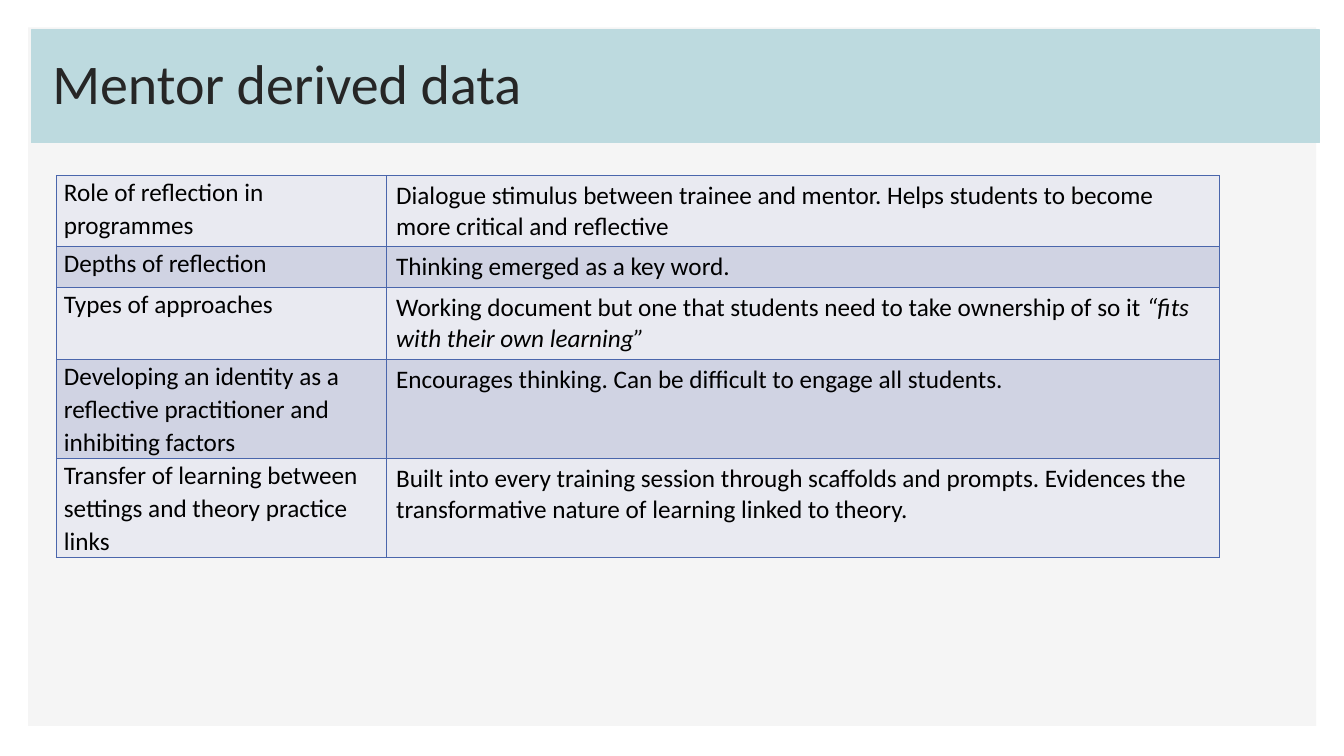
from lxml import etree
from pptx import Presentation
from pptx.dml.color import RGBColor
from pptx.enum.shapes import MSO_SHAPE
from pptx.enum.text import MSO_ANCHOR
from pptx.oxml.ns import qn
from pptx.util import Cm, Pt

ROWS = [
    (1.78, "Role of reflection in programmes",
     ["Dialogue stimulus between trainee and mentor. Helps students to become "
      "more critical and reflective"]),
    (1.04, "Depths of reflection", ["Thinking emerged as a key word."]),
    (1.81, "Types of approaches",
     ["Working document but one that students need to take ownership of so it ",
      "“fits with their own learning”"]),
    (2.49, "Developing an identity as a reflective practitioner and inhibiting factors",
     ["Encourages thinking. Can be difficult to engage all students."]),
    (2.49, "Transfer of learning between settings and theory practice links",
     ["Built into every training session through scaffolds and prompts. "
      "Evidences the transformative nature of learning linked to theory."]),
]
COLUMN_WIDTHS = (8.31, 21.01)


def rgb(value):
    return RGBColor.from_string(value)


class SlideBuilder:
    font = "Calibri"
    panel = "F5F5F5"
    band = "BDDADF"
    title_color = "262626"
    text_color = "000000"
    border = "4A66AC"
    stripes = ("E9EAF1", "D0D3E3")

    def __init__(self, slide):
        self.slide = slide

    def style(self, run, size, color, italic=False):
        run.font.name = self.font
        run.font.size = Pt(size)
        run.font.color.rgb = rgb(color)
        run.font.italic = italic

    def rectangle(self, x, y, w, h, fill, outlined=False):
        sp = self.slide.shapes.add_shape(
            MSO_SHAPE.RECTANGLE, Cm(x), Cm(y), Cm(w), Cm(h))
        sp.shadow.inherit = False
        sp.fill.solid()
        sp.fill.fore_color.rgb = rgb(fill)
        if outlined:
            sp.line.color.rgb = rgb(fill)
            sp.line.width = Pt(1)
        else:
            sp.line.fill.background()

    def title(self, text, x, y, w, h):
        tf = self.slide.shapes.add_textbox(Cm(x), Cm(y), Cm(w), Cm(h)).text_frame
        tf.word_wrap = True
        tf.vertical_anchor = MSO_ANCHOR.BOTTOM
        tf.text = text
        self.style(tf.paragraphs[0].runs[0], 40, self.title_color)

    def cell_borders(self, cell):
        tc_pr = cell._tc.get_or_add_tcPr()
        for side in ("a:lnL", "a:lnR", "a:lnT", "a:lnB"):
            ln = etree.SubElement(tc_pr, qn(side), w=str(Pt(1)))
            fill = etree.SubElement(ln, qn("a:solidFill"))
            etree.SubElement(fill, qn("a:srgbClr"), val=self.border)

    def cell(self, cell, texts, fill):
        """Fill a cell; any text after the first is set in italics."""
        self.cell_borders(cell)
        cell.fill.solid()
        cell.fill.fore_color.rgb = rgb(fill)
        p = cell.text_frame.paragraphs[0]
        for i, text in enumerate(texts):
            r = p.add_run()
            r.text = text
            self.style(r, 18, self.text_color, italic=i > 0)
        return p

    def heading_cell(self, cell, text, fill):
        p = self.cell(cell, [text], fill)
        p.line_spacing = 1.07
        p.space_after = Pt(8)
        cell.margin_left = cell.margin_right = Cm(0.19)
        cell.margin_top = cell.margin_bottom = Cm(0)

    def table(self, rows, widths, x, y):
        height = sum(row[0] for row in rows)
        table = self.slide.shapes.add_table(
            len(rows), len(widths), Cm(x), Cm(y), Cm(sum(widths)), Cm(height)).table
        table.first_row = False
        table.horz_banding = False
        for column, width in zip(table.columns, widths):
            column.width = Cm(width)
        for i, (row_height, heading, texts) in enumerate(rows):
            fill = self.stripes[i % 2]
            table.rows[i].height = Cm(row_height)
            self.heading_cell(table.cell(i, 0), heading, fill)
            self.cell(table.cell(i, 1), texts, fill)


def main():
    prs = Presentation()
    prs.slide_width, prs.slide_height = Cm(33.87), Cm(19.05)
    s = SlideBuilder(prs.slides.add_slide(prs.slide_layouts[6]))
    s.rectangle(0.71, 0.69, 32.46, 17.6, s.panel)
    s.rectangle(0.79, 0.76, 32.46, 2.84, s.band, outlined=True)
    s.title("Mentor derived data", 1.07, 1.27, 28.42, 1.78)
    s.table(ROWS, COLUMN_WIDTHS, 1.42, 4.43)
    prs.save("out.pptx")


if __name__ == "__main__":
    main()
